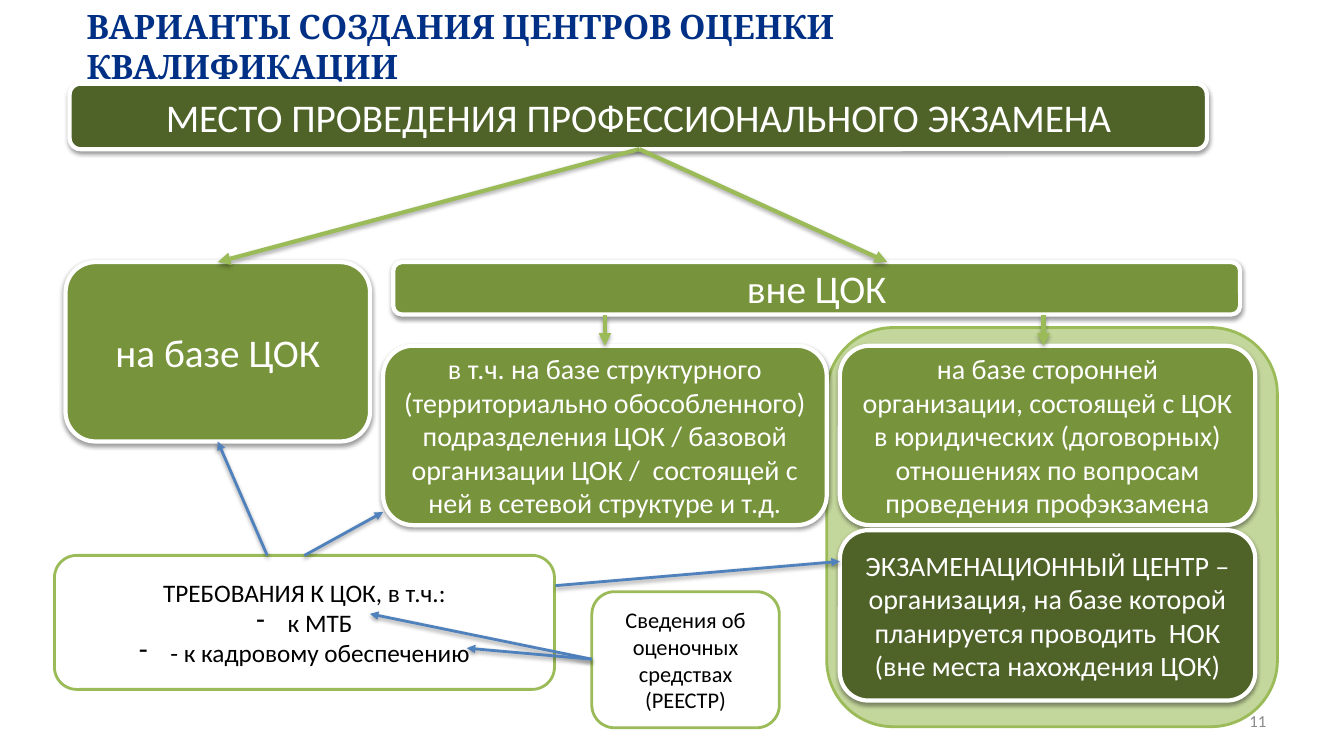
import pptx
import pptx.dml.color
import pptx.enum.shapes
import pptx.enum.text
import pptx.oxml
import pptx.oxml.ns
import pptx.util

# Content: places are px, 100 to the inch
SLIDE_SIZE = (1333, 750)
TITLE = ("ВАРИАНТЫ СОЗДАНИЯ ЦЕНТРОВ ОЦЕНКИ КВАЛИФИКАЦИИ", (76, 9, 902, 73))
PAGE_NUMBER = ("11", (955, 695, 311, 40))

# name: (place, look, text size, paragraphs); "•" marks a dash-bulleted paragraph
BOXES = {
    "panel": ((820, 325, 447, 396), "panel", "note", []),
    "exam place": ((69, 83, 1128, 65), "dark", "heading",
                   ["МЕСТО ПРОВЕДЕНИЯ ПРОФЕССИОНАЛЬНОГО ЭКЗАМЕНА"]),
    "inside": ((65, 260, 302, 178), "green", "heading", ["на базе ЦОК"]),
    "branch": ((380, 343, 440, 178), "green", "detail",
               ["в т.ч. на базе структурного (территориально обособленного) "
                "подразделения ЦОК / базовой организации ЦОК /  состоящей с ней "
                "в сетевой структуре и т.д."]),
    "outside": ((390, 260, 840, 52), "green", "heading", ["вне ЦОК"]),
    "partner": ((833, 343, 412, 178), "green", "detail",
                ["на базе сторонней организации, состоящей с ЦОК в юридических "
                 "(договорных) отношениях по вопросам проведения профэкзамена"]),
    "requirements": ((54, 551, 496, 133), "outlined", "list",
                     ["ТРЕБОВАНИЯ К ЦОК, в т.ч.:", "•к МТБ",
                      "•- к кадровому обеспечению"]),
    "registry": ((587, 587, 186, 135), "outlined", "note",
                 ["Сведения об оценочных средствах", "(РЕЕСТР)"]),
    "exam centre": ((833, 526, 412, 169), "dark", "detail",
                    ["ЭКЗАМЕНАЦИОННЫЙ ЦЕНТР – организация, на базе которой "
                     "планируется проводить  НОК (вне места нахождения ЦОК)"]),
}

# (look, from, to): each end is a box and an offset from its top left corner
ARROWS = [
    ("division", ("outside", 210, 53), ("branch", 220, 0)),
    ("division", ("outside", 645, 53), ("partner", 202, 0)),
    ("division", ("exam place", 565, 65), ("inside", 151, 0)),
    ("division", ("exam place", 565, 65), ("outside", 490, 0)),
    ("demand", ("requirements", 497, 30), ("exam centre", 0, 31)),
    ("demand", ("requirements", 248, 0), ("branch", 0, 165)),
    ("demand", ("requirements", 211, 0), ("inside", 151, 178)),
    ("demand", ("registry", 0, 67), ("requirements", 313, 58)),
    ("demand", ("registry", 0, 67), ("requirements", 409, 92)),
]

THEME = {
    # fill, line, line width, text, shadow
    "boxes": {
        "panel": ("C3D69B", "9BBB59", 2, "000000", False),
        "dark": ("4F6228", "FFFFFF", 3, "FFFFFF", True),
        "green": ("77933C", "FFFFFF", 3, "FFFFFF", True),
        "outlined": ("FFFFFF", "9BBB59", 2, "000000", False),
    },
    # line, line width, shadow opacity in percent
    "arrows": {"division": ("9BBB59", 3, 35), "demand": ("4F81BD", 2, 38)},
    "sizes": {"title": 24, "heading": 28, "detail": 20, "list": 18,
              "note": 16, "page": 12},
    "title": "003085",
    "page": "898989",
    "fonts": {"title": "Cambria", "body": "Calibri"},
    "shadow opacity": 38,
}

PX = 9144
ALIGN = pptx.enum.text.PP_ALIGN
MIDDLE = pptx.enum.text.MSO_ANCHOR.MIDDLE


def emu(lengths):
    return [length * PX for length in lengths]


def rgb(code):
    return pptx.dml.color.RGBColor.from_string(code)


def add_xml(parent, xml):
    namespaces = pptx.oxml.ns.nsdecls("a")
    tag, rest = xml[1:].split(" ", 1)
    parent.append(pptx.oxml.parse_xml(f"<{tag} {namespaces} {rest}"))


def add_shadow(properties, opacity):
    add_xml(properties, '<a:effectLst ><a:outerShdw blurRad="40000" dist="20000" '
            'dir="5400000" rotWithShape="0"><a:srgbClr val="000000">'
            f'<a:alpha val="{opacity * 1000}"/></a:srgbClr></a:outerShdw></a:effectLst>')


def set_line(line, color, width):
    line.color.rgb = rgb(color)
    line.width = pptx.util.Pt(width)


def write(frame, paragraphs, size, color, align, face="body", bold=False):
    for key, value in {"word_wrap": True, "vertical_anchor": MIDDLE,
                       "auto_size": pptx.enum.text.MSO_AUTO_SIZE.NONE}.items():
        setattr(frame, key, value)
    font_format = {"name": THEME["fonts"][face], "bold": bold,
                   "size": pptx.util.Pt(THEME["sizes"][size])}
    for index, words in enumerate(paragraphs):
        paragraph = frame.add_paragraph() if index else frame.paragraphs[0]
        paragraph.text = words.removeprefix("•")
        paragraph.alignment = align
        if words.startswith("•"):
            properties = paragraph._p.get_or_add_pPr()
            properties.set("marL", str(31 * PX))
            properties.set("indent", str(-31 * PX))
            add_xml(properties, '<a:buChar char="-"/>')
        for key, value in font_format.items():
            setattr(paragraph.font, key, value)
        paragraph.font.color.rgb = rgb(color)


def add_box(slide, place, look, size, paragraphs):
    fill, line, width, text, shadow = THEME["boxes"][look]
    box = slide.shapes.add_shape(
        pptx.enum.shapes.MSO_SHAPE.ROUNDED_RECTANGLE, *emu(place))
    box.fill.solid()
    box.fill.fore_color.rgb = rgb(fill)
    set_line(box.line, line, width)
    if shadow:
        add_shadow(box._element.spPr, THEME["shadow opacity"])
    else:
        box.shadow.inherit = False
    if paragraphs:
        write(box.text_frame, paragraphs, size, text, ALIGN.CENTER)


def arrow_end(name, dx, dy):
    left, top = BOXES[name][0][:2]
    return emu((left + dx, top + dy))


def add_arrow(slide, look, start, end):
    color, width, opacity = THEME["arrows"][look]
    arrow = slide.shapes.add_connector(
        pptx.enum.shapes.MSO_CONNECTOR.STRAIGHT, *arrow_end(*start), *arrow_end(*end))
    set_line(arrow.line, color, width)
    add_xml(arrow.line._get_or_add_ln(), '<a:tailEnd type="triangle"/>')
    add_shadow(arrow._element.spPr, opacity)


def main():
    deck = pptx.Presentation()
    deck.slide_width, deck.slide_height = emu(SLIDE_SIZE)
    slide = deck.slides.add_slide(deck.slide_layouts[5])

    # Title
    words, place = TITLE
    title = slide.shapes.title
    for side, length in zip(("left", "top", "width", "height"), emu(place)):
        setattr(title, side, length)
    write(title.text_frame, [words], "title", THEME["title"], ALIGN.LEFT, "title", True)

    # Scheme
    for box in BOXES.values():
        add_box(slide, *box)
    for arrow in ARROWS:
        add_arrow(slide, *arrow)

    # Page number
    words, place = PAGE_NUMBER
    page = slide.shapes.add_textbox(*emu(place))
    write(page.text_frame, [words], "page", THEME["page"], ALIGN.RIGHT)

    deck.save("out.pptx")


if __name__ == "__main__":
    main()
